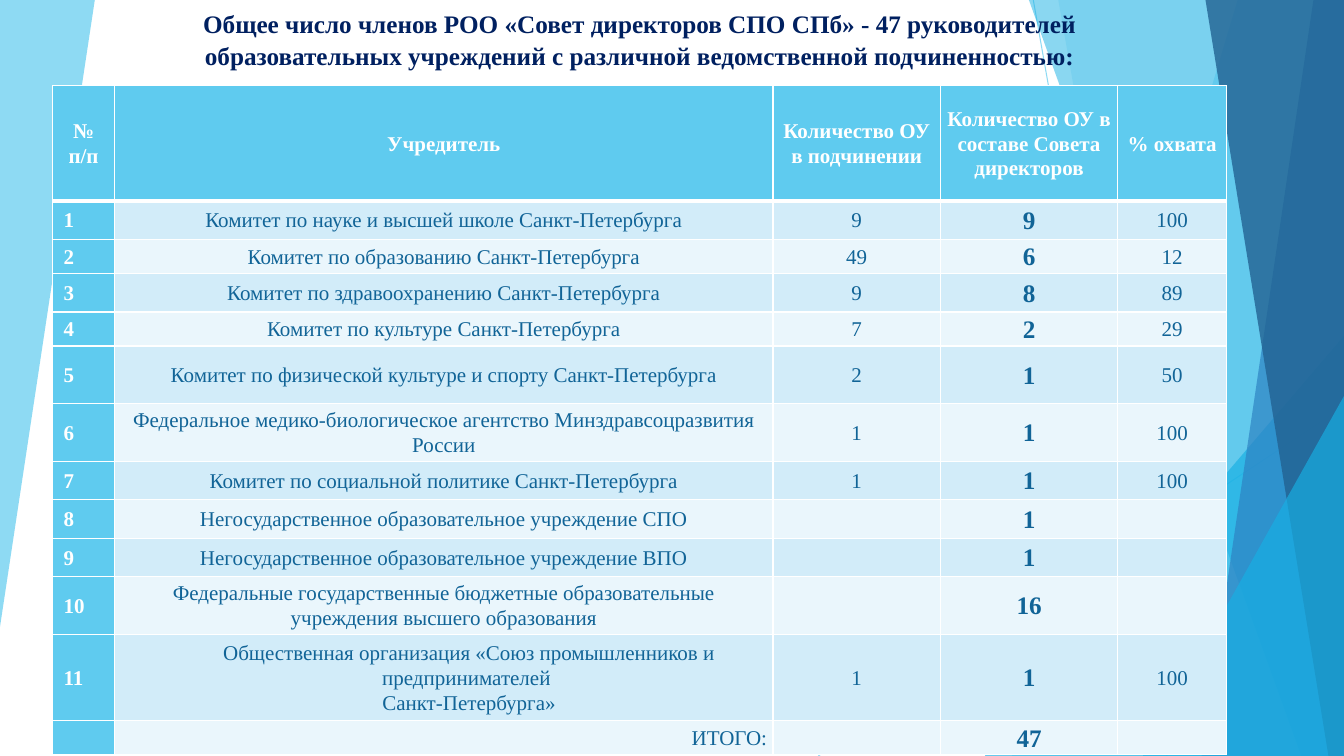
from lxml.etree import SubElement
from pptx import Presentation
from pptx.dml.color import RGBColor
from pptx.enum.shapes import MSO_CONNECTOR, MSO_SHAPE
from pptx.enum.text import MSO_ANCHOR, MSO_AUTO_SIZE, PP_ALIGN
from pptx.oxml.ns import qn
from pptx.util import Cm, Pt

WIDTH, HEIGHT = 33.87, 19.05
FONT = "Times New Roman"
LINE_SPACING = 1.07
COLORS = {
    "sky": "5FCBEF", "cyan": "17B0E4", "blue": "2E83C3", "navy": "226292",
    "title": "002060", "text": "116497", "white": "FFFFFF",
    "odd": "D2ECF9", "even": "EAF6FC",
}
TITLE = ("Общее число членов РОО «Совет директоров СПО СПб» - 47 руководителей "
         "образовательных учреждений с различной ведомственной подчиненностью:")
HEADER = ("№ п/п", "Учредитель", "Количество ОУ в подчинении",
          "Количество ОУ в составе Совета директоров", "% охвата")
FOUNDERS = [
    ("Комитет по науке и высшей школе Санкт-Петербурга", "9", "9", "100"),
    ("Комитет по образованию Санкт-Петербурга", "49", "6", "12"),
    ("Комитет по здравоохранению Санкт-Петербурга", "9", "8", "89"),
    ("Комитет по культуре Санкт-Петербурга", "7", "2", "29"),
    ("Комитет по физической культуре и спорту Санкт-Петербурга", "2", "1", "50"),
    ("Федеральное медико-биологическое агентство Минздравсоцразвития России",
     "1", "1", "100"),
    ("Комитет по социальной политике Санкт-Петербурга", "1", "1", "100"),
    ("Негосударственное образовательное учреждение СПО", "", "1", ""),
    ("Негосударственное образовательное учреждение ВПО", "", "1", ""),
    ("Федеральные государственные бюджетные образовательные учреждения "
     "высшего образования", "", "16", ""),
    ("Общественная организация «Союз промышленников и предпринимателей \n"
     "Санкт-Петербурга»", "1", "1", "100"),
]
TOTAL = ("", "ИТОГО:", "", "47", "")
COLUMN_WIDTHS = (1.57, 16.59, 4.22, 4.47, 2.74)
ROW_HEIGHTS = (2.9, 0.97, 0.86, 0.97, 0.86, 1.45, 1.45, 0.97, 0.97, 0.97,
               1.45, 2.18, 0.86)
# Slanted facets in back-to-front order: corner points, colour, opacity.
# A facet given as a box (left, top) is a right triangle reaching the lower right corner.
FACETS = [
    ([(0, 0), (2.39, 0), (0, 15.8)], "sky", 70),
    ([(31.19, 0), (WIDTH, 0), (WIDTH, HEIGHT), (25.5, HEIGHT)], "sky", 36),
    ([(26.67, 0), (WIDTH, 0), (WIDTH, HEIGHT), (30.05, HEIGHT)], "sky", 20),
    ((24.82, 8.46), "cyan", 66),
    ([(25.93, 0), (WIDTH, 0), (WIDTH, HEIGHT), (32.79, HEIGHT)], "cyan", 50),
    ([(33.1, 0), (WIDTH, 0), (WIDTH, HEIGHT), (30.28, HEIGHT)], "blue", 70),
    ([(30.38, 0), (WIDTH, 0), (WIDTH, HEIGHT), (33.48, HEIGHT)], "navy", 80),
    ((28.8, 9.98), "cyan", 66),
]
RAYS = [(26.04, 0, 29.41, HEIGHT), (WIDTH, 10.24, 20.62, HEIGHT)]


def color(name):
    return RGBColor.from_string(COLORS[name])


def set_opacity(fill_owner, percent):
    for rgb in fill_owner.iter(qn("a:srgbClr")):
        SubElement(rgb, qn("a:alpha"), val=str(percent * 1000))


def add_facet(slide, outline, color_name, opacity):
    if isinstance(outline, tuple):
        left, top = outline
        shape = slide.shapes.add_shape(
            MSO_SHAPE.ISOSCELES_TRIANGLE, Cm(left), Cm(top),
            Cm(WIDTH - left), Cm(HEIGHT - top))
        shape.adjustments[0] = 1
    else:
        points = [(Cm(x), Cm(y)) for x, y in outline]
        builder = slide.shapes.build_freeform(*points[0])
        builder.add_line_segments(points[1:], close=True)
        shape = builder.convert_to_shape()
    shape.shadow.inherit = False
    shape.fill.solid()
    shape.fill.fore_color.rgb = color(color_name)
    set_opacity(shape.element.spPr, opacity)
    shape.line.fill.background()


def add_ray(slide, ends):
    ray = slide.shapes.add_connector(MSO_CONNECTOR.STRAIGHT, *map(Cm, ends))
    ray.line.width = Pt(0.75)
    ray.line.color.rgb = color("sky")
    properties = ray.element.spPr
    set_opacity(properties, 70)
    SubElement(properties, qn("a:effectLst"))


def add_backdrop(slide):
    add_facet(slide, *FACETS[0])
    for ends in RAYS:
        add_ray(slide, ends)
    for facet in FACETS[1:]:
        add_facet(slide, *facet)


def format_paragraph(paragraph, size, color_name, bold, alignment):
    paragraph.alignment = alignment
    paragraph.line_spacing = LINE_SPACING
    for run in paragraph.runs:
        for name, value in {"name": FONT, "size": Pt(size), "bold": bold}.items():
            setattr(run.font, name, value)
        run.font.color.rgb = color(color_name)


def place_title(slide, left, top, width, height):
    title = slide.shapes.title
    box = {"left": left, "top": top, "width": width, "height": height}
    for name, value in box.items():
        setattr(title, name, Cm(value))
    frame = title.text_frame
    frame.text = TITLE
    frame.word_wrap = True
    frame.auto_size = MSO_AUTO_SIZE.NONE
    frame.vertical_anchor = MSO_ANCHOR.BOTTOM
    format_paragraph(frame.paragraphs[0], 18, "title", True, PP_ALIGN.CENTER)
    slide.shapes.element.append(title.element)  # in front of the backdrop


def set_borders(cell, widths):
    properties = cell.fill and cell._tc.get_or_add_tcPr()
    for side, width in widths.items():
        line = SubElement(properties, qn(f"a:ln{side}"), w=str(Pt(width)))
        fill = SubElement(line, qn("a:solidFill"))
        SubElement(fill, qn("a:srgbClr"), val=COLORS["white"])


def fill_cell(cell, text, row, column):
    is_header, is_label = row == 0, column == 0
    set_borders(cell, {"L": 1, "R": 1, "T": 3 if row == 1 else 1,
                       "B": 3 if is_header else 1})
    cell.fill.solid()
    cell.fill.fore_color.rgb = color(
        "sky" if is_header or is_label else "odd" if row % 2 else "even")
    cell.vertical_anchor = MSO_ANCHOR.MIDDLE
    cell.margin_left = cell.margin_right = Cm(0.15)
    cell.margin_top = cell.margin_bottom = 0

    cell.text = text
    alignment = PP_ALIGN.CENTER
    if is_label and not is_header:
        alignment = PP_ALIGN.JUSTIFY
    elif text == TOTAL[1]:
        alignment = PP_ALIGN.RIGHT
    in_council = column == 3 and not is_header
    for paragraph in cell.text_frame.paragraphs:
        format_paragraph(paragraph, 18 if in_council else 15,
                         "white" if is_header or is_label else "text",
                         is_header or is_label or in_council, alignment)
        if column == 1 and row >= len(FOUNDERS):
            paragraph._p.get_or_add_pPr().set("marL", str(Cm(1.27)))


def add_founders_table(slide, left, top):
    rows = [HEADER]
    rows += [(f" {number}", *founder) for number, founder in enumerate(FOUNDERS, 1)]
    rows.append(TOTAL)
    table = slide.shapes.add_table(
        len(rows), len(HEADER), Cm(left), Cm(top),
        Cm(sum(COLUMN_WIDTHS)), Cm(sum(ROW_HEIGHTS))).table
    for column, width in zip(table.columns, COLUMN_WIDTHS):
        column.width = Cm(width)
    for row, height in zip(table.rows, ROW_HEIGHTS):
        row.height = Cm(height)
    for row, texts in enumerate(rows):
        for column, text in enumerate(texts):
            fill_cell(table.cell(row, column), text, row, column)


def main():
    presentation = Presentation()
    presentation.slide_width, presentation.slide_height = Cm(WIDTH), Cm(HEIGHT)
    slide = presentation.slides.add_slide(presentation.slide_layouts[5])
    add_backdrop(slide)
    place_title(slide, 4.17, -0.48, 23.9, 2.39)
    add_founders_table(slide, 1.32, 2.16)
    presentation.save("out.pptx")


if __name__ == "__main__":
    main()
